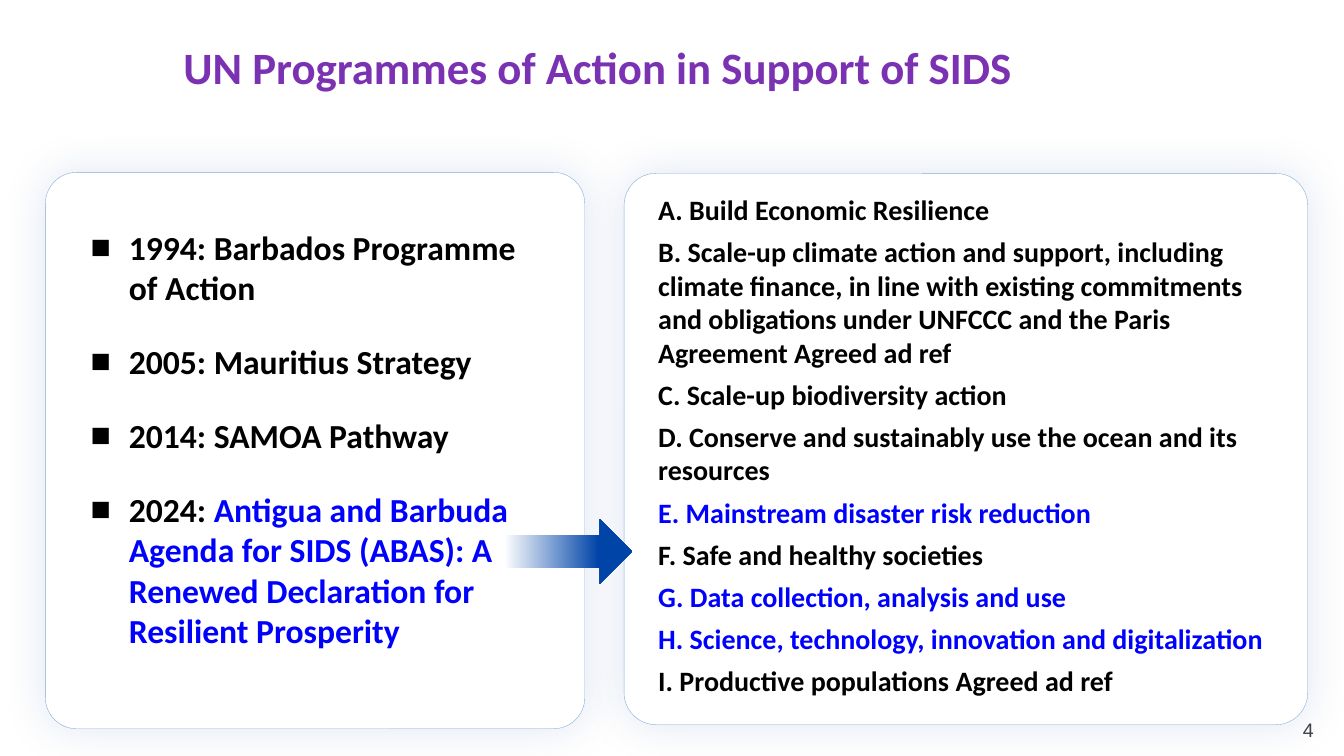
import pptx
import pptx.util
import pptx.dml.color
import pptx.enum.dml
import pptx.enum.shapes
import pptx.enum.text
import pptx.oxml
import pptx.oxml.ns
from dataclasses import dataclass
from lxml import etree
from pptx.util import Inches


@dataclass(frozen=True)
class Theme:
    title: str = "7B32B2"
    body: str = "000000"
    highlight: str = "0000FF"
    accent: str = "0044A8"
    white: str = "FFFFFF"
    number: str = "404040"
    font: str = "Calibri"
    number_font: str = "Arial"
    title_size: int = 32
    programme_size: int = 24
    priority_size: int = 20
    number_size: int = 14


THEME = Theme()

# Each paragraph is a list of (text, colour) runs
PROGRAMMES = [
    [("1994: Barbados Programme of Action", THEME.body)],
    [("2005: Mauritius Strategy", THEME.body)],
    [("2014: SAMOA Pathway", THEME.body)],
    [("2024: ", THEME.body),
     ("Antigua and Barbuda Agenda for SIDS (ABAS): A Renewed Declaration "
      "for Resilient Prosperity", THEME.highlight)],
]
PRIORITIES = [
    [("A. Build Economic Resilience", THEME.body)],
    [("B. Scale-up climate action and support, including climate finance, "
      "in line with existing commitments and obligations under UNFCCC and "
      "the Paris Agreement Agreed ad ref", THEME.body)],
    [("C. Scale-up biodiversity action", THEME.body)],
    [("D. Conserve and sustainably use the ocean and its resources", THEME.body)],
    [("E. Mainstream disaster risk reduction", THEME.highlight)],
    [("F. Safe and healthy societies", THEME.body)],
    [("G. Data collection, analysis and use", THEME.highlight)],
    [("H. Science, technology, innovation and digitalization", THEME.highlight)],
    [("I. Productive populations Agreed ad ref", THEME.body)],
]


def rgb(colour):
    return pptx.dml.color.RGBColor.from_string(colour)


def box(left, top, width, height):
    return [Inches(value) for value in (left, top, width, height)]


def add_xml(parent, tag, **attributes):
    element = etree.SubElement(parent, pptx.oxml.ns.qn(tag))
    for name, value in attributes.items():
        element.set(name, str(value))
    return element


def add_run(paragraph, text, size, colour, font=THEME.font, bold=True):
    run = paragraph.add_run()
    run.text = text
    run.font.name = font
    run.font.size = pptx.util.Pt(size)
    run.font.bold = bold
    run.font.color.rgb = rgb(colour)


def add_title(slide, text):
    title = slide.shapes.title
    title.left, title.top, title.width, title.height = box(0, 0.33, 11.86, 0.71)
    frame = title.text_frame
    frame.auto_size = pptx.enum.text.MSO_AUTO_SIZE.NONE
    frame.vertical_anchor = pptx.enum.text.MSO_ANCHOR.MIDDLE
    paragraph = frame.paragraphs[0]
    paragraph.alignment = pptx.enum.text.PP_ALIGN.CENTER
    paragraph.line_spacing = pptx.util.Pt(34.8)
    add_run(paragraph, text, THEME.title_size, THEME.title)


def add_panel(slide, place):
    panel = slide.shapes.add_shape(
        pptx.enum.shapes.MSO_SHAPE.ROUNDED_RECTANGLE, *box(*place))
    panel.adjustments[0] = 0.058
    panel.fill.solid()
    panel.fill.fore_color.rgb = rgb(THEME.white)
    panel.line.width = pptx.util.Pt(0.25)
    panel.line.color.rgb = rgb(THEME.accent)
    properties = panel._element.spPr
    line_colour = properties.find(
        ".//" + pptx.oxml.ns.qn("a:ln") + "//" + pptx.oxml.ns.qn("a:srgbClr"))
    add_xml(line_colour, "a:alpha", val=45000)

    # Soft glow around the panel
    panel.shadow.inherit = False
    effects = properties.find(pptx.oxml.ns.qn("a:effectLst"))
    shadow = add_xml(effects, "a:outerShdw", blurRad=pptx.util.Pt(31),
                     dist=0, dir=0, algn="ctr", rotWithShape=0)
    shadow_colour = add_xml(shadow, "a:srgbClr", val=THEME.accent)
    add_xml(shadow_colour, "a:alpha", val=12000)


def add_bullet(paragraph):
    properties = paragraph._p.get_or_add_pPr()
    indent = Inches(0.38)
    properties.set("marL", str(indent))
    properties.set("indent", str(-indent))
    add_xml(properties, "a:buFont", typeface="Arial")
    add_xml(properties, "a:buChar", char="■")


def add_list(slide, place, items, size, gap, bulleted=False):
    frame = slide.shapes.add_textbox(*box(*place)).text_frame
    frame.word_wrap = True
    for index, runs in enumerate(items):
        paragraph = frame.add_paragraph() if index else frame.paragraphs[0]
        if index:
            paragraph.space_before = pptx.util.Pt(gap)
        if bulleted:
            add_bullet(paragraph)
        for text, colour in runs:
            add_run(paragraph, text, size, colour)


def add_arrow(slide, place):
    arrow = slide.shapes.add_shape(
        pptx.enum.shapes.MSO_SHAPE.RIGHT_ARROW, *box(*place))
    arrow.shadow.inherit = False
    arrow.line.fill.background()
    arrow.fill.gradient()
    arrow.fill.gradient_angle = 0
    stops = ((0, THEME.white), (0.74, THEME.accent))
    for stop, (position, colour) in zip(arrow.fill.gradient_stops, stops):
        stop.position = position
        stop.color.rgb = rgb(colour)


def add_slide_number(slide, text):
    frame = slide.shapes.add_textbox(*box(12.73, 7.1, 0.49, 0.27)).text_frame
    frame.word_wrap = True
    frame.vertical_anchor = pptx.enum.text.MSO_ANCHOR.MIDDLE
    paragraph = frame.paragraphs[0]
    paragraph.alignment = pptx.enum.text.PP_ALIGN.CENTER
    add_run(paragraph, text, THEME.number_size, THEME.number,
            font=THEME.number_font, bold=False)


def main():
    presentation = pptx.Presentation()
    presentation.slide_width = Inches(13.33)
    presentation.slide_height = Inches(7.5)
    slide = presentation.slides.add_slide(presentation.slide_layouts[5])

    add_title(slide, "UN Programmes of Action in Support of SIDS")

    # Left: programmes by year
    add_panel(slide, (0.45, 1.71, 5.35, 5.52))
    add_slide_number(slide, "4")
    add_list(slide, (0.8, 2.2, 4.65, 4.57), PROGRAMMES,
             THEME.programme_size, gap=24, bulleted=True)

    # Right: priorities of the latest agenda
    add_panel(slide, (6.19, 1.72, 6.78, 5.47))
    add_list(slide, (6.43, 1.86, 6.3, 5.25), PRIORITIES,
             THEME.priority_size, gap=6)

    # Link from the 2024 agenda to its priorities
    add_arrow(slide, (5, 5.15, 1.27, 0.64))

    presentation.save("out.pptx")


if __name__ == "__main__":
    main()
